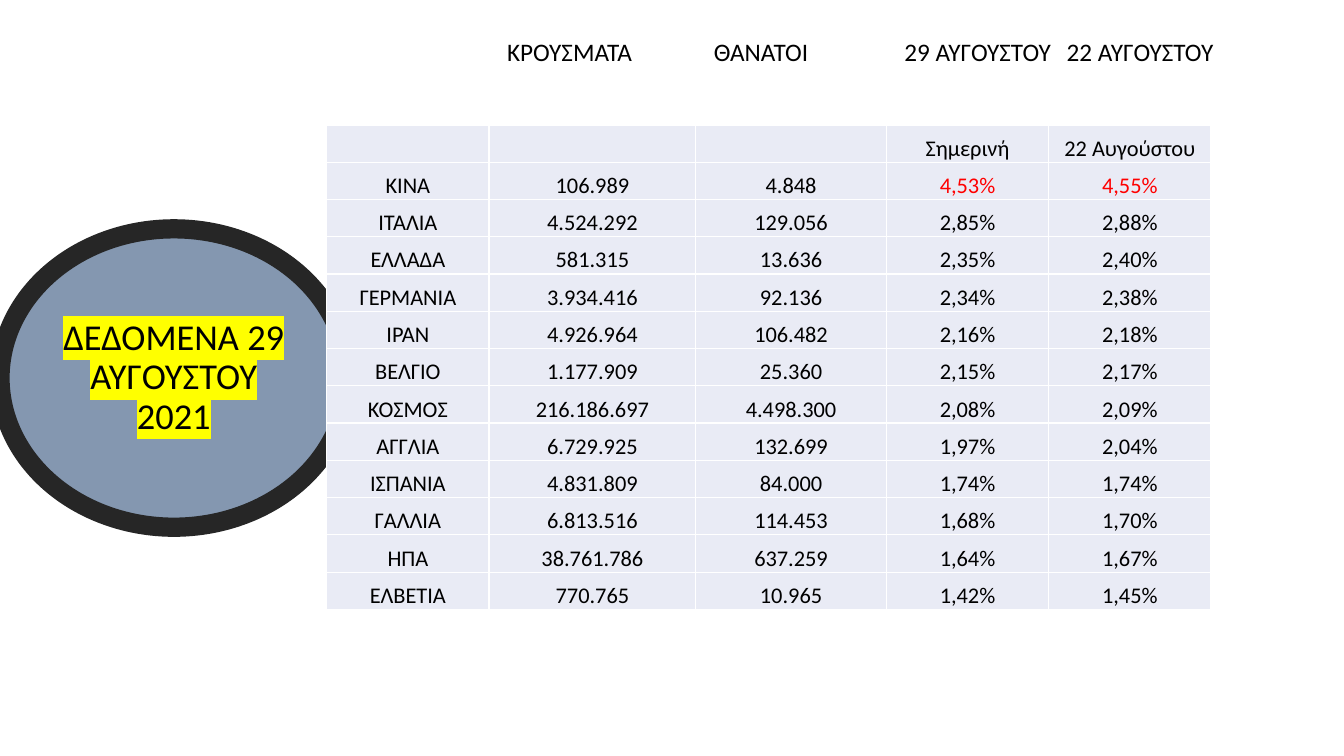
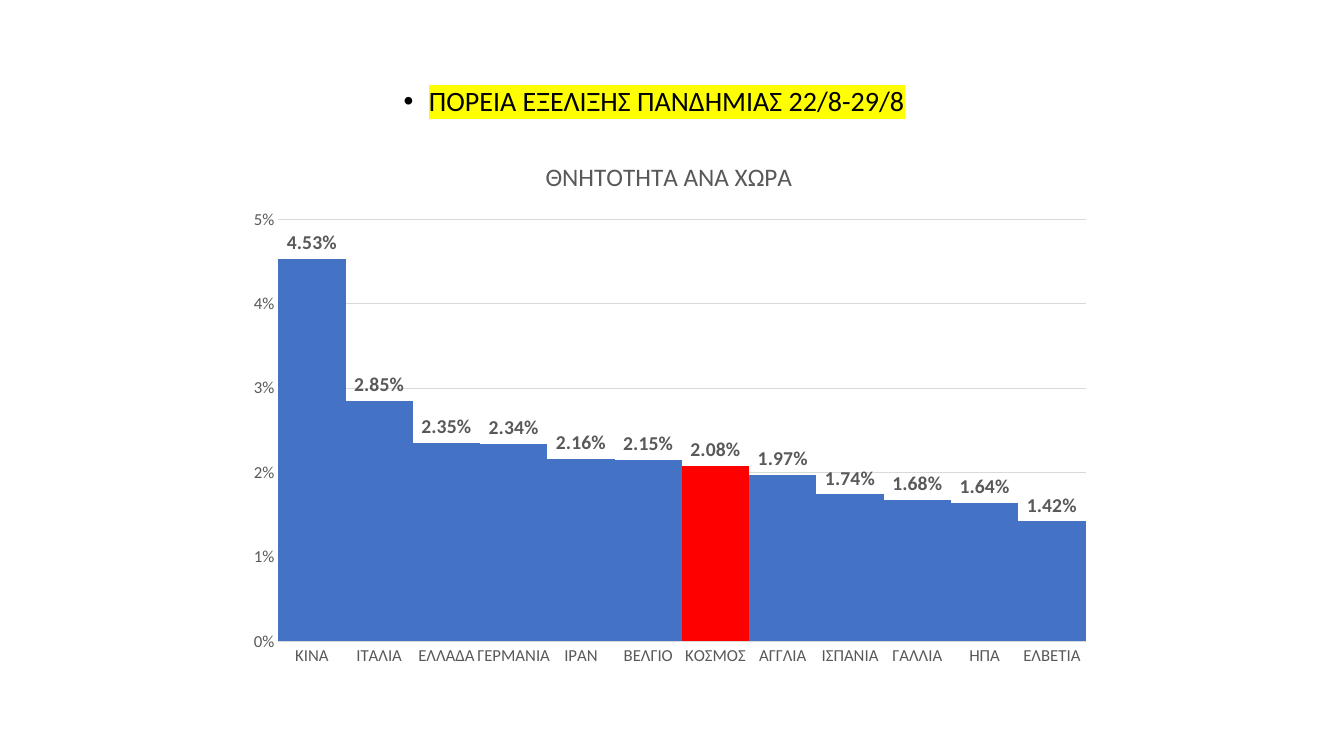
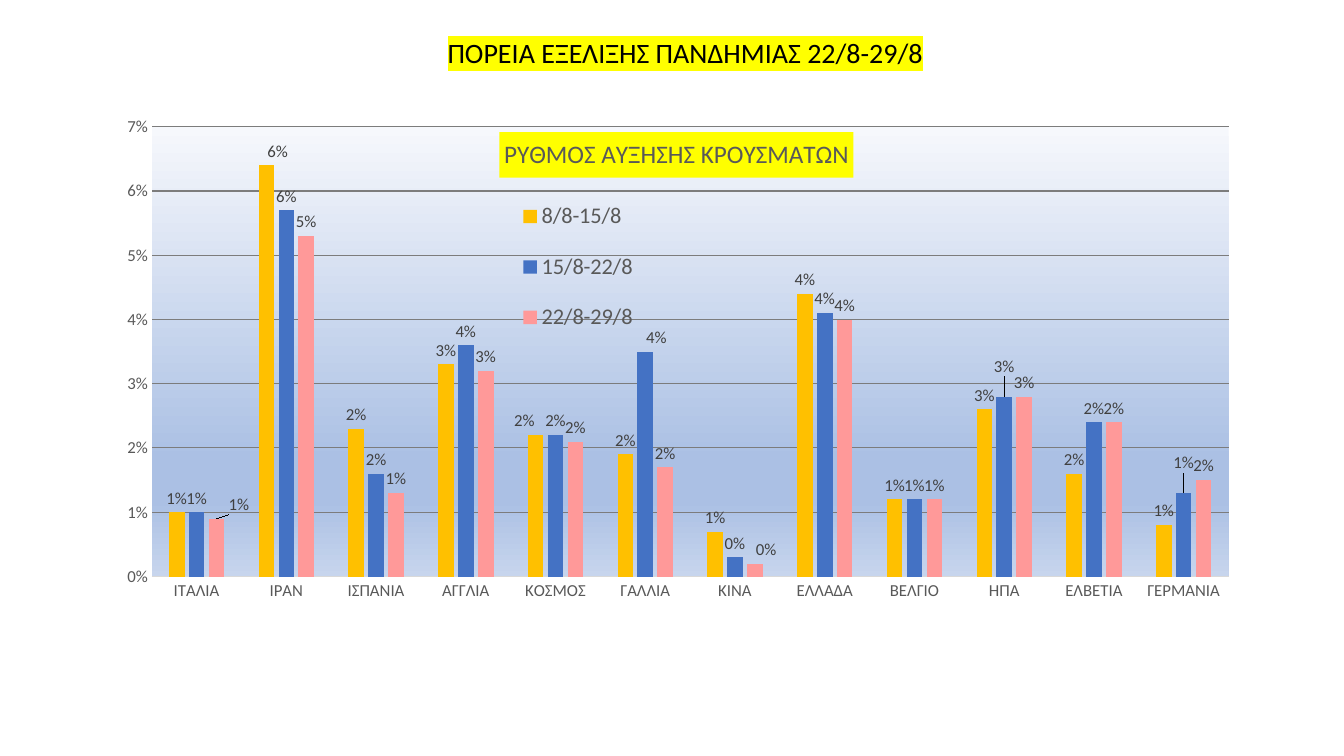
import lxml.etree
import pptx
import pptx.chart.data
import pptx.dml.color
import pptx.enum.chart
import pptx.enum.shapes
import pptx.enum.text
import pptx.oxml.ns
import pptx.util

FONT = "Calibri"
COLORS = {
    "text": "000000", "muted": "595959", "label": "404040", "highlight": "FFFF00",
    "alert": "FF0000", "badge": "8497B0", "ring": "262626", "cell": "E9EBF5",
    "border": "FFFFFF", "axis": "D9D9D9", "grid": "7C7C7C",
    "blue": "4472C4", "gold": "FFC000", "pink": "FF9999",
}
PLOT_GRADIENT = [(0, "F6F8FC"), (74, "ABC0E4"), (83, "ABC0E4"), (100, "C7D5ED")]
SLIDE_WIDTH = pptx.util.Inches(13.33)
SLIDE_HEIGHT = pptx.util.Inches(7.5)

TABLE_LEFT, TABLE_TOP, TABLE_ROW = 24.31, 16.53, 4.93
TABLE_COLUMNS = [12.08, 15.38, 14.18, 12.08, 12.08]
COLUMN_HEADINGS = ["ΚΡΟΥΣΜΑΤΑ", "ΘΑΝΑΤΟΙ", "29 ΑΥΓΟΥΣΤΟΥ", "22 ΑΥΓΟΥΣΤΟΥ"]
PROGRESS_TITLE = "ΠΟΡΕΙΑ ΕΞΕΛΙΞΗΣ ΠΑΝΔΗΜΙΑΣ 22/8-29/8"

COUNTRIES = [
    ("ΚΙΝΑ", "106.989", "4.848", "4,53%", "4,55%"),
    ("ΙΤΑΛΙΑ", "4.524.292", "129.056", "2,85%", "2,88%"),
    ("ΕΛΛΑΔΑ", "581.315", "13.636", "2,35%", "2,40%"),
    ("ΓΕΡΜΑΝΙΑ", "3.934.416", "92.136", "2,34%", "2,38%"),
    ("ΙΡΑΝ", "4.926.964", "106.482", "2,16%", "2,18%"),
    ("ΒΕΛΓΙΟ", "1.177.909", "25.360", "2,15%", "2,17%"),
    ("ΚΟΣΜΟΣ", "216.186.697", "4.498.300", "2,08%", "2,09%"),
    ("ΑΓΓΛΙΑ", "6.729.925", "132.699", "1,97%", "2,04%"),
    ("ΙΣΠΑΝΙΑ", "4.831.809", "84.000", "1,74%", "1,74%"),
    ("ΓΑΛΛΙΑ", "6.813.516", "114.453", "1,68%", "1,70%"),
    ("ΗΠΑ", "38.761.786", "637.259", "1,64%", "1,67%"),
    ("ΕΛΒΕΤΙΑ", "770.765", "10.965", "1,42%", "1,45%"),
]
GROWTH_COUNTRIES = ["ΙΤΑΛΙΑ", "ΙΡΑΝ", "ΙΣΠΑΝΙΑ", "ΑΓΓΛΙΑ", "ΚΟΣΜΟΣ", "ΓΑΛΛΙΑ",
                    "ΚΙΝΑ", "ΕΛΛΑΔΑ", "ΒΕΛΓΙΟ", "ΗΠΑ", "ΕΛΒΕΤΙΑ", "ΓΕΡΜΑΝΙΑ"]
GROWTH_WEEKS = [
    ("8/8-15/8", [1, 6.4, 2.3, 3.3, 2.2, 1.9, 0.7, 4.4, 1.2, 2.6, 1.6, 0.8], "gold"),
    ("15/8-22/8", [1, 5.7, 1.6, 3.6, 2.2, 3.5, 0.3, 4.1, 1.2, 2.8, 2.4, 1.3], "blue"),
    ("22/8-29/8", [0.9, 5.3, 1.3, 3.2, 2.1, 1.7, 0.2, 4, 1.2, 2.8, 2.4, 1.5], "pink"),
]
LABEL_SHIFTS = [
    (0, "ΙΡΑΝ", 0.01, 0), (0, "ΚΟΣΜΟΣ", -0.01, 0),
    (1, "ΓΑΛΛΙΑ", 0.01, 0), (1, "ΗΠΑ", 0, -0.03), (1, "ΓΕΡΜΑΝΙΑ", 0, -0.03),
    (2, "ΙΤΑΛΙΑ", 0.02, 0), (2, "ΚΙΝΑ", 0.01, 0),
]


def across(share):
    return round(SLIDE_WIDTH * share / 100)


def down(share):
    return round(SLIDE_HEIGHT * share / 100)


def place(left, top, width, height):
    return across(left), down(top), across(width), down(height)


def rgb(name):
    return pptx.dml.color.RGBColor.from_string(COLORS[name])


def paint(target, name):
    target.fill.solid()
    target.fill.fore_color.rgb = rgb(name)


def style_font(font, size, color="text", bold=False):
    font.size = pptx.util.Pt(size)
    font.name = FONT
    font.bold = bold
    font.color.rgb = rgb(color)


def add_node(parent, tag, **attributes):
    return lxml.etree.SubElement(parent, pptx.oxml.ns.qn(tag), attributes)


def add_solid_fill(parent, hex_color):
    add_node(add_node(parent, "a:solidFill"), "a:srgbClr", val=hex_color)


def highlight(run):
    properties = run._r.get_or_add_rPr()
    marker = add_node(properties, "a:highlight")
    add_node(marker, "a:srgbClr", val=COLORS["highlight"])
    properties.find(pptx.oxml.ns.qn("a:latin")).addprevious(marker)


def write(frame, text, size, color="text", align=None, highlighted=False):
    frame.word_wrap = True
    frame.text = text
    paragraph = frame.paragraphs[0]
    paragraph.alignment = align
    run = paragraph.runs[0]
    style_font(run.font, size, color)
    if highlighted:
        paragraph.line_spacing = 0.9
        frame.vertical_anchor = pptx.enum.text.MSO_ANCHOR.MIDDLE
        highlight(run)
    return paragraph


def add_badge(slide, text, area):
    badge = slide.shapes.add_shape(pptx.enum.shapes.MSO_SHAPE.OVAL, *place(*area))
    badge.shadow.inherit = False
    paint(badge, "badge")
    badge.line.color.rgb = rgb("ring")
    badge.line.width = pptx.util.Pt(13.75)
    write(badge.text_frame, text, 26, align=pptx.enum.text.PP_ALIGN.CENTER, highlighted=True)


def add_heading(slide, text, area):
    heading = slide.shapes.add_textbox(*place(*area))
    write(heading.text_frame, text, 18)


def add_progress_title(slide, area, bulleted=False):
    title = slide.shapes.add_textbox(*place(*area))
    align = pptx.enum.text.PP_ALIGN.CENTER if bulleted else None
    paragraph = write(title.text_frame, PROGRESS_TITLE, 20, align=align, highlighted=True)
    if bulleted:
        properties = paragraph._p.get_or_add_pPr()
        properties.set("marL", "0")
        properties.set("indent", str(-pptx.util.Inches(0.25)))
        add_node(properties, "a:buFont", typeface="Arial")
        add_node(properties, "a:buChar", char="•")


def border_cell(cell):
    properties = cell._tc.get_or_add_tcPr()
    for position, side in enumerate(("a:lnL", "a:lnR", "a:lnT", "a:lnB")):
        edge = add_node(properties, side, w=str(pptx.util.Pt(1)))
        add_solid_fill(edge, COLORS["border"])
        properties.insert(position, edge)


def fill_cell(cell, text, color):
    paint(cell, "cell")
    border_cell(cell)
    cell.margin_left = cell.margin_right = cell.margin_top = pptx.util.Inches(0.01)
    cell.margin_bottom = 0
    cell.vertical_anchor = pptx.enum.text.MSO_ANCHOR.BOTTOM
    if text:
        write(cell.text_frame, text, 16, color, pptx.enum.text.PP_ALIGN.CENTER)


def add_country_table(slide):
    rows = [("", "", "", "Σημερινή", "22 Αυγούστου")] + COUNTRIES
    area = place(TABLE_LEFT, TABLE_TOP, sum(TABLE_COLUMNS), TABLE_ROW * len(rows))
    table = slide.shapes.add_table(len(rows), len(TABLE_COLUMNS), *area).table
    for column, width in zip(table.columns, TABLE_COLUMNS):
        column.width = across(width)
    for row_index, row in enumerate(rows):
        table.rows[row_index].height = down(TABLE_ROW)
        for column_index, text in enumerate(row):
            highest_rate = row_index == 1 and column_index >= 3
            fill_cell(table.cell(row_index, column_index), text,
                      "alert" if highest_rate else "text")


def set_layout(owner, inner=False, **shares):
    for old in owner.findall(pptx.oxml.ns.qn("c:layout")):
        owner.remove(old)
    layout = add_node(owner, "c:layout")
    manual = add_node(layout, "c:manualLayout")
    if inner:
        add_node(manual, "c:layoutTarget", val="inner")
    for mode in ("xMode", "yMode"):
        add_node(manual, f"c:{mode}", val="edge")
    for side, share in shares.items():
        add_node(manual, f"c:{side}", val=str(share))
    overlay = owner.find(pptx.oxml.ns.qn("c:overlay"))
    if overlay is None:
        owner.insert(0, layout)
    else:
        overlay.addprevious(layout)


def shift_label(point, x, y, size, color):
    label = point.data_label
    style_font(label.font, size, color)
    label.position = pptx.enum.chart.XL_LABEL_POSITION.OUTSIDE_END
    element = label._get_or_add_dLbl()
    layout = add_node(element, "c:layout")
    manual = add_node(layout, "c:manualLayout")
    add_node(manual, "c:x", val=str(x))
    add_node(manual, "c:y", val=str(y))
    element.insert(1, layout)


def plot_area(chart):
    return chart._chartSpace.find(".//" + pptx.oxml.ns.qn("c:plotArea"))


def fill_plot_gradient(chart):
    gradient = add_node(add_node(plot_area(chart), "c:spPr"), "a:gradFill")
    stops = add_node(gradient, "a:gsLst")
    for position, hex_color in PLOT_GRADIENT:
        stop = add_node(stops, "a:gs", pos=str(position * 1000))
        add_node(stop, "a:srgbClr", val=hex_color)
    add_node(gradient, "a:lin", ang="5400000", scaled="0")


def style_axes(chart, maximum, grid_color):
    for axis in (chart.category_axis, chart.value_axis):
        axis.major_tick_mark = pptx.enum.chart.XL_TICK_MARK.NONE
        axis.minor_tick_mark = pptx.enum.chart.XL_TICK_MARK.NONE
        style_font(axis.tick_labels.font, 12, "muted")
    base_line = chart.category_axis.format.line
    base_line.color.rgb = rgb("axis")
    base_line.width = pptx.util.Pt(0.75)
    values = chart.value_axis
    values.minimum_scale, values.maximum_scale, values.major_unit = 0, maximum, 0.01
    values.tick_labels.number_format = "0%"
    values.tick_labels.number_format_is_linked = False
    values.format.line.fill.background()
    values.has_major_gridlines = True
    values.major_gridlines.format.line.color.rgb = rgb(grid_color)
    values.major_gridlines.format.line.width = pptx.util.Pt(0.75)


def style_labels(labels, size, color, number_format, bold):
    labels.show_value = True
    labels.number_format = number_format
    labels.number_format_is_linked = False
    labels.position = pptx.enum.chart.XL_LABEL_POSITION.OUTSIDE_END
    style_font(labels.font, size, color, bold)


def add_columns(slide, area, title, categories, series, maximum, grid_color,
                gap, overlap, label_style):
    data = pptx.chart.data.CategoryChartData(number_format=label_style[2])
    data.categories = categories
    for name, values, _ in series:
        data.add_series(name, values)
    chart = slide.shapes.add_chart(
        pptx.enum.chart.XL_CHART_TYPE.COLUMN_CLUSTERED, *place(*area), data).chart
    style_font(chart.font, 10)
    chart.has_legend = False
    chart.has_title = True
    heading = chart.chart_title.text_frame
    heading.text = title
    style_font(heading.paragraphs[0].runs[0].font, 18, "muted")
    style_axes(chart, maximum, grid_color)
    plot = chart.plots[0]
    plot.vary_by_categories = False
    plot.gap_width, plot.overlap = gap, overlap
    for bars, (_, _, color) in zip(plot.series, series):
        bars.invert_if_negative = False
        paint(bars.format, color)
        style_labels(bars.data_labels, *label_style)
    return chart


def build_data_slide(slide):
    add_badge(slide, "ΔΕΔΟΜΕΝΑ 29 ΑΥΓΟΥΣΤΟΥ 2021", (0, 30.27, 25.88, 39.47))
    for index, text in enumerate(COLUMN_HEADINGS, start=1):
        left = TABLE_LEFT + sum(TABLE_COLUMNS[:index]) + 0.6
        add_heading(slide, text, (left, 4.13, 15.38, 5.33))
    add_country_table(slide)


def build_mortality_slide(slide):
    add_progress_title(slide, (7.5, 10.93, 83.5, 5.33), bulleted=True)
    names = [country[0] for country in COUNTRIES]
    rates = [round(float(country[3].strip("%").replace(",", ".")) / 100, 4)
             for country in COUNTRIES]
    chart = add_columns(
        slide, (17.48, 18.27, 64.59, 71.6), "ΘΝΗΤΟΤΗΤΑ ΑΝΑ ΧΩΡΑ", names,
        [("Series 1", rates, "blue")], 0.05, "axis", 0, 0,
        (14, "muted", "0.00%", True))
    paint(chart.plots[0].series[0].points[names.index("ΚΟΣΜΟΣ")].format, "alert")
    set_layout(plot_area(chart), inner=True, x=0.05, y=0.15, w=0.93, h=0.78)


def build_growth_slide(slide):
    add_progress_title(slide, (32.56, 4.53, 37.2, 5.2))
    weeks = [(name, [round(percent / 100, 3) for percent in percents], color)
             for name, percents, color in GROWTH_WEEKS]
    chart = add_columns(
        slide, (7.95, 14.67, 83.5, 70), "ΡΥΘΜΟΣ ΑΥΞΗΣΗΣ ΚΡΟΥΣΜΑΤΩΝ", GROWTH_COUNTRIES,
        weeks, 0.07, "grid", 219, -27, (12, "label", "0%", False))
    for week, country, x, y in LABEL_SHIFTS:
        bar = chart.plots[0].series[week].points[GROWTH_COUNTRIES.index(country)]
        shift_label(bar, x, y, 12, "label")
    paint(chart.chart_title.format, "highlight")
    set_layout(chart.chart_title._element, x=0.35, y=0.04)
    chart.has_legend = True
    chart.legend.position = pptx.enum.chart.XL_LEGEND_POSITION.RIGHT
    chart.legend.include_in_layout = False
    style_font(chart.legend.font, 16, "muted")
    set_layout(chart.legend._element, x=0.36, y=0.13, w=0.12, h=0.33)
    set_layout(plot_area(chart), inner=True, x=0.04, y=0.03, w=0.96, h=0.85)
    fill_plot_gradient(chart)


def main():
    presentation = pptx.Presentation()
    presentation.slide_width = SLIDE_WIDTH
    presentation.slide_height = SLIDE_HEIGHT
    blank = presentation.slide_layouts[6]
    for build in (build_data_slide, build_mortality_slide, build_growth_slide):
        build(presentation.slides.add_slide(blank))
    presentation.save("out.pptx")


if __name__ == "__main__":
    main()
